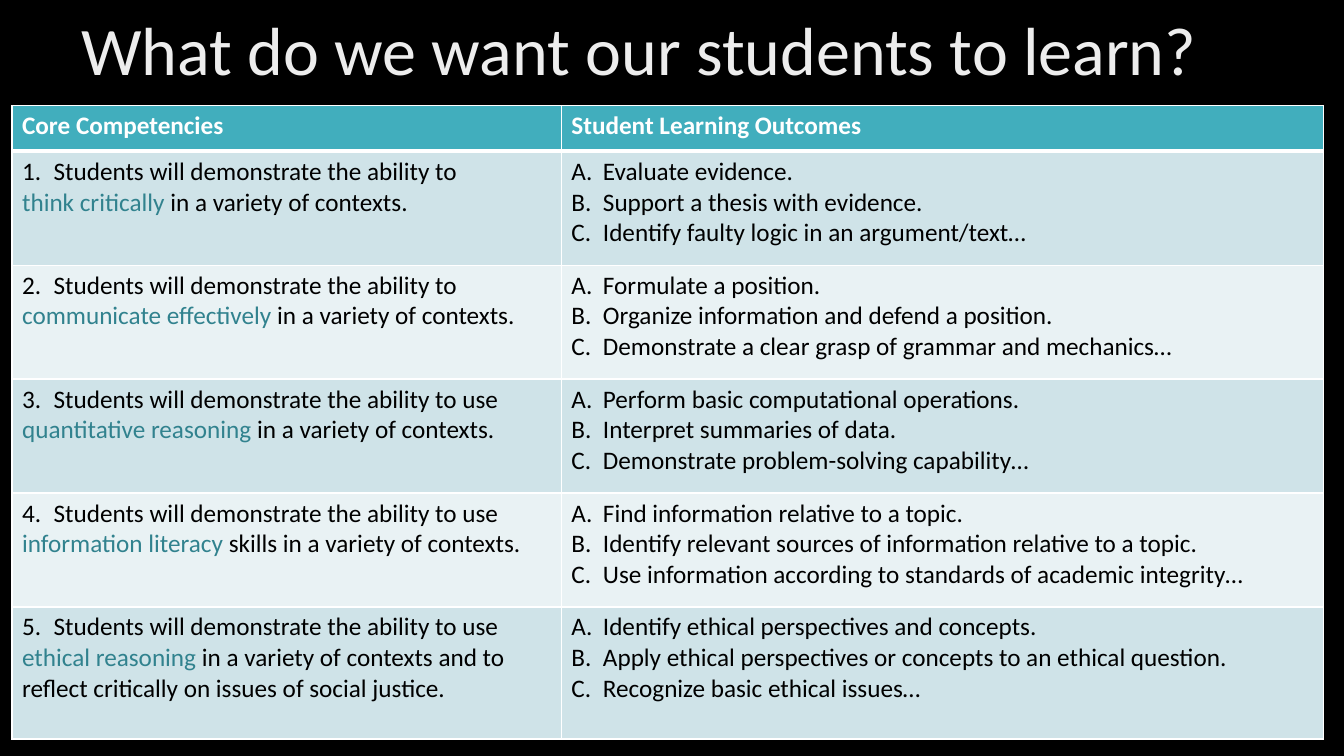
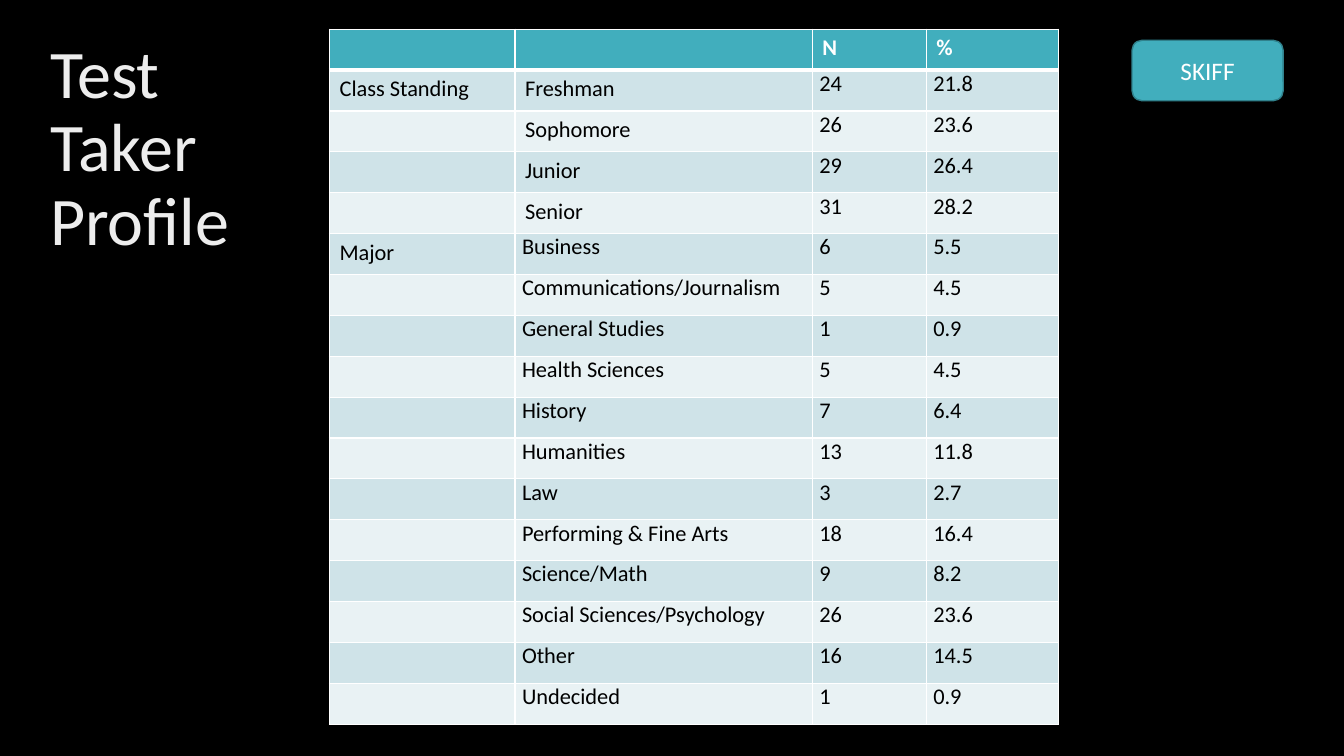
from lxml import etree
from pptx import Presentation
from pptx.dml.color import RGBColor
from pptx.enum.shapes import MSO_SHAPE
from pptx.enum.text import MSO_ANCHOR, PP_ALIGN
from pptx.oxml.ns import qn
from pptx.util import Pt

ROUNDED = MSO_SHAPE.ROUNDED_RECTANGLE
MIDDLE = MSO_ANCHOR.MIDDLE
CENTER = PP_ALIGN.CENTER

FONT = "Calibri"
BLACK, WHITE, TITLE = "000000", "FFFFFF", "EDEDED"
TEAL, TEAL_EDGE, TEAL_TEXT = "41AEBD", "30818C", "31828E"
BANDS = ("CFE3E8", "E9F2F4")
TAB_STOP = 22.5

LEAD = "Students will demonstrate the ability to"
COMPETENCIES = [
    (LEAD, "think critically", "in a variety of contexts.",
     ["Evaluate evidence.",
      "Support a thesis with evidence.",
      "Identify faulty logic in an argument/text…"]),
    (LEAD, "communicate effectively", "in a variety of contexts.",
     ["Formulate a position.",
      "Organize information and defend a position.",
      "Demonstrate a clear grasp of grammar and mechanics…"]),
    (LEAD + " use", "quantitative reasoning", "in a variety of contexts.",
     ["Perform basic computational operations.",
      "Interpret summaries of data.",
      "Demonstrate problem-solving capability…"]),
    (LEAD + " use", "information literacy", "skills in a variety of contexts.",
     ["Find information relative to a topic.",
      "Identify relevant sources of information relative to a topic.",
      "Use information according to standards of academic integrity…"]),
    (LEAD + " use", "ethical reasoning",
     "in a variety of contexts and to reflect critically on issues of social justice.",
     ["Identify ethical perspectives and concepts.",
      "Apply ethical perspectives or concepts to an ethical question.",
      "Recognize basic ethical issues…"]),
]

PROFILE = {
    "Class Standing": [
        ("Freshman", "24", "21.8"), ("Sophomore", "26", "23.6"),
        ("Junior", "29", "26.4"), ("Senior", "31", "28.2")],
    "Major": [
        ("Business", "6", "5.5"), ("Communications/Journalism", "5", "4.5"),
        ("General Studies", "1", "0.9"), ("Health Sciences", "5", "4.5"),
        ("History", "7", "6.4"), ("Humanities", "13", "11.8"),
        ("Law", "3", "2.7"), ("Performing & Fine Arts", "18", "16.4"),
        ("Science/Math", "9", "8.2"), ("Social Sciences/Psychology", "26", "23.6"),
        ("Other", "16", "14.5"), ("Undecided", "1", "0.9")],
}


def rgb(color):
    return RGBColor.from_string(color)


def set_font(font, size, color, bold=False):
    font.name, font.size, font.bold = FONT, Pt(size), bold
    font.color.rgb = rgb(color)


def add_tab_stop(paragraph):
    tabs = etree.SubElement(paragraph._p.get_or_add_pPr(), qn("a:tabLst"))
    etree.SubElement(tabs, qn("a:tab"), pos=str(Pt(TAB_STOP)), algn="l")


def add_borders(cell, **widths):
    """Draw white cell borders; keys are L, R, T and B in that order."""
    for side, width in widths.items():
        line = etree.SubElement(cell._tc.get_or_add_tcPr(), qn(f"a:ln{side}"),
                                w=str(Pt(width)))
        fill = etree.SubElement(line, qn("a:solidFill"))
        etree.SubElement(fill, qn("a:srgbClr"), val=WHITE)


def write(frame, paragraphs, size, color, bold=False):
    """Fill a frame; a paragraph is a string or a list of (text, color) spans.

    A span of None is a line break.
    """
    for index, content in enumerate(paragraphs):
        paragraph = frame.add_paragraph() if index else frame.paragraphs[0]
        spans = [(content, None)] if isinstance(content, str) else content
        if spans[0][0][1:3] == ".\t":
            add_tab_stop(paragraph)
        set_font(paragraph.font, size, color, bold)
        for span in spans:
            if span is None:
                paragraph.add_line_break()
                continue
            text, accent = span
            run = paragraph.add_run()
            run.text = text
            if accent:
                run.font.color.rgb = rgb(accent)


class Slides:
    def __init__(self):
        self.deck = Presentation()
        self.deck.slide_width, self.deck.slide_height = Pt(960), Pt(540)
        self.slide = None

    def new_slide(self):
        self.slide = self.deck.slides.add_slide(self.deck.slide_layouts[6])
        fill = self.slide.background.fill
        fill.solid()
        fill.fore_color.rgb = rgb(BLACK)

    def title(self, text, left, top, width, height):
        box = self.slide.shapes.add_textbox(Pt(left), Pt(top), Pt(width), Pt(height))
        frame = box.text_frame
        frame.word_wrap = True
        frame.vertical_anchor = MIDDLE
        write(frame, [text], 48.6, TITLE)
        frame.paragraphs[0].line_spacing = 0.9

    def badge(self, text, left, top, width, height):
        badge = self.slide.shapes.add_shape(ROUNDED, Pt(left), Pt(top),
                                            Pt(width), Pt(height))
        badge.shadow.inherit = False
        badge.fill.solid()
        badge.fill.fore_color.rgb = rgb(TEAL)
        badge.line.color.rgb = rgb(TEAL_EDGE)
        badge.line.width = Pt(1)
        frame = badge.text_frame
        frame.vertical_anchor = MIDDLE
        write(frame, [text], 18, WHITE)
        frame.paragraphs[0].alignment = CENTER

    def table(self, left, top, widths, heights, rows, size, is_tight=None):
        """Add a banded table; is_tight(row, column) picks cells with small margins."""
        table = self.slide.shapes.add_table(
            len(rows), len(widths), Pt(left), Pt(top),
            Pt(sum(widths)), Pt(sum(heights))).table
        table.horz_banding = False
        for column, width in zip(table.columns, widths):
            column.width = Pt(width)
        for row, height in zip(table.rows, heights):
            row.height = Pt(height)
        for r, row in enumerate(rows):
            for c, paragraphs in enumerate(row):
                cell = table.cell(r, c)
                header = r == 0
                add_borders(cell, L=1, R=1, T=3 if r == 1 else 1, B=3 if header else 1)
                cell.fill.solid()
                cell.fill.fore_color.rgb = rgb(TEAL if header else BANDS[(r - 1) % 2])
                if is_tight and is_tight(r, c):
                    cell.margin_left = cell.margin_right = Pt(5)
                    cell.margin_top = cell.margin_bottom = Pt(0)
                write(cell.text_frame, paragraphs, size,
                      WHITE if header else BLACK, header)


def competencies_slide(slides):
    slides.new_slide()
    slides.title("What do we want our students to learn?", 51, 0, 828, 75.6)
    rows = [[["Core Competencies"], ["Student Learning Outcomes"]]]
    for number, (lead, skill, rest, outcomes) in enumerate(COMPETENCIES, 1):
        competency = [(f"{number}.\t{lead}", None), None,
                      (f"{skill} ", TEAL_TEXT), (rest, None)]
        lettered = [f"{letter}.\t{text}" for letter, text in zip("ABC", outcomes)]
        rows.append([[competency], lettered])
    slides.table(8.6, 75.6, [392.4, 544.3], [32.4] + [81.4] * 4 + [94.4], rows, 18)


def profile_slide(slides):
    slides.new_slide()
    slides.title("Test Taker Profile", 28.8, 54.7, 175.7, 104.4)
    slides.badge("SKIFF", 808.6, 28.8, 108, 43.2)
    rows = [[[], [], ["N"], ["%"]]]
    for group, entries in PROFILE.items():
        for index, entry in enumerate(entries):
            label = [] if index else [group]
            rows.append([label] + [[value] for value in entry])
    first_major = 1 + len(PROFILE["Class Standing"])
    slides.table(235.4, 20.9, [132.5, 212.4, 81.4, 94.3], [29.2] * len(rows), rows, 16,
                 lambda r, c: r > 0 and (c > 1 or c == 1 and r >= first_major))


def main():
    slides = Slides()
    competencies_slide(slides)
    profile_slide(slides)
    slides.deck.save("out.pptx")


if __name__ == "__main__":
    main()
